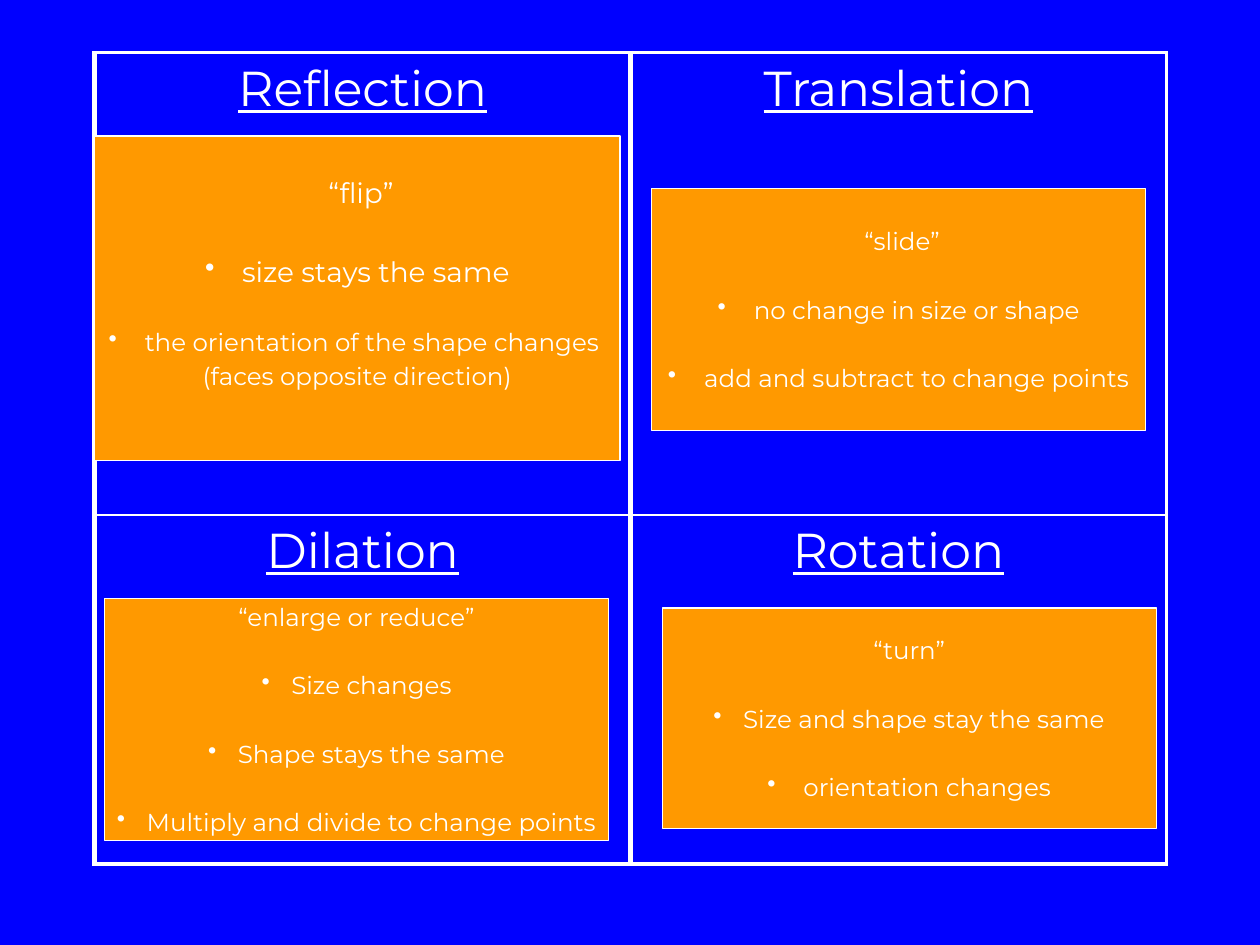
import pptx
import pptx.util
import pptx.dml.color
import pptx.enum.shapes
import pptx.enum.text
import pptx.oxml
import pptx.oxml.ns
from lxml import etree

Cm = pptx.util.Cm
Pt = pptx.util.Pt
RGBColor = pptx.dml.color.RGBColor
CENTER = pptx.enum.text.PP_ALIGN.CENTER

BLUE = RGBColor(0x00, 0x00, 0xFF)
ORANGE = RGBColor(0xFF, 0x99, 0x00)
WHITE = RGBColor(0xFF, 0xFF, 0xFF)
FONT = "Montserrat"

LEFT, TOP = Cm(1.91), Cm(1.06)
COL = Cm(10.8)
ROWS = [Cm(9.32), Cm(7.04)]
INDENT = Cm(0.6)

HEAD, POINT, MORE = "head", "point", "more"

# Each cell: title, card box within the cell (cm), lower inset (cm), lines.
CELLS = [
    [
        ("Reflection", (0, 1.68, 10.59, 6.55), 0.73, [
            (HEAD, 16, " “flip”"),
            (POINT, 16, " size stays the same"),
            (POINT, 14, " the orientation of the shape changes "),
            (MORE, 14, "(faces opposite direction)"),
        ]),
        ("Translation", (0.43, 2.74, 9.96, 4.88), 0.13, [
            (HEAD, 14, " “slide”"),
            (POINT, 14, " no change in size or shape"),
            (POINT, 14, " add and subtract to change points"),
        ]),
    ],
    [
        ("Dilation", (0.2, 1.68, 10.16, 4.88), 0.13, [
            (HEAD, 14, "“enlarge or reduce”"),
            (POINT, 14, "Size changes"),
            (POINT, 14, "Shape stays the same"),
            (POINT, 14, "Multiply and divide to change points"),
        ]),
        ("Rotation", (0.64, 1.88, 9.96, 4.45), 0.13, [
            (HEAD, 14, "“turn”"),
            (POINT, 14, "Size and shape stay the same"),
            (POINT, 14, " orientation changes"),
        ]),
    ],
]


def set_text(para, text, size, line=False):
    para.text = text
    para.alignment = CENTER
    font = para.runs[0].font
    font.name, font.size, font.underline = FONT, Pt(size), line
    font.color.rgb = WHITE


def add_bullet(para):
    props = para._p.get_or_add_pPr()
    props.set("marL", str(INDENT))
    props.set("indent", str(-INDENT))
    mark = etree.SubElement(props, pptx.oxml.ns.qn("a:buChar"))
    mark.set("char", "•")


def set_edges(cell, widths):
    """Draw the left, right, top and bottom edges, widths in points."""
    props = cell._tc.get_or_add_tcPr()
    for spot, (side, width) in enumerate(zip("LRTB", widths)):
        edge = pptx.oxml.parse_xml(
            f'<a:ln{side} {pptx.oxml.ns.nsdecls("a")} w="{Pt(width)}">'
            f'<a:solidFill><a:srgbClr val="{WHITE}"/></a:solidFill>'
            f'</a:ln{side}>')
        props.insert(spot, edge)


def draw_grid(slide, left, top):
    frame = slide.shapes.add_table(2, 2, left, top, 2 * COL, sum(ROWS))
    table = frame.table
    table.first_row = table.horz_banding = False
    for col in table.columns:
        col.width = COL
    for r, row in enumerate(CELLS):
        table.rows[r].height = ROWS[r]
        for c, (title, *_) in enumerate(row):
            cell = table.cell(r, c)
            cell.fill.background()
            set_text(cell.text_frame.paragraphs[0], title, 28, True)
            set_edges(cell, (3, (3, 2.25)[c], (2.25, 1)[r], (1, 2.25)[r]))


def draw_card(slide, left, top, box, inset, lines):
    x, y, width, height = map(Cm, box)
    card = slide.shapes.add_shape(
        pptx.enum.shapes.MSO_SHAPE.RECTANGLE, left + x, top + y, width, height)
    card.shadow.inherit = False
    card.fill.solid()
    card.fill.fore_color.rgb = ORANGE
    card.line.color.rgb = WHITE
    card.line.width = Pt(0.75)
    frame = card.text_frame
    frame.word_wrap = False
    frame.vertical_anchor = pptx.enum.text.MSO_ANCHOR.MIDDLE
    frame.margin_bottom = Cm(inset)
    for i, (kind, size, text) in enumerate(lines):
        para = frame.add_paragraph() if i else frame.paragraphs[0]
        set_text(para, text, size)
        if kind == POINT:
            para.space_before = Pt(1.6 * size)
            add_bullet(para)
        elif kind == MORE:
            para.space_before = Pt(0.2 * size)


def main():
    deck = pptx.Presentation()
    deck.slide_width, deck.slide_height = Cm(25.4), Cm(19.05)
    slide = deck.slides.add_slide(deck.slide_layouts[6])
    slide.background.fill.solid()
    slide.background.fill.fore_color.rgb = BLUE
    draw_grid(slide, LEFT, TOP)
    for r, row in enumerate(CELLS):
        for c, (_, box, inset, lines) in enumerate(row):
            draw_card(slide, LEFT + c * COL, TOP + sum(ROWS[:r]),
                      box, inset, lines)
    deck.save("out.pptx")


if __name__ == "__main__":
    main()
